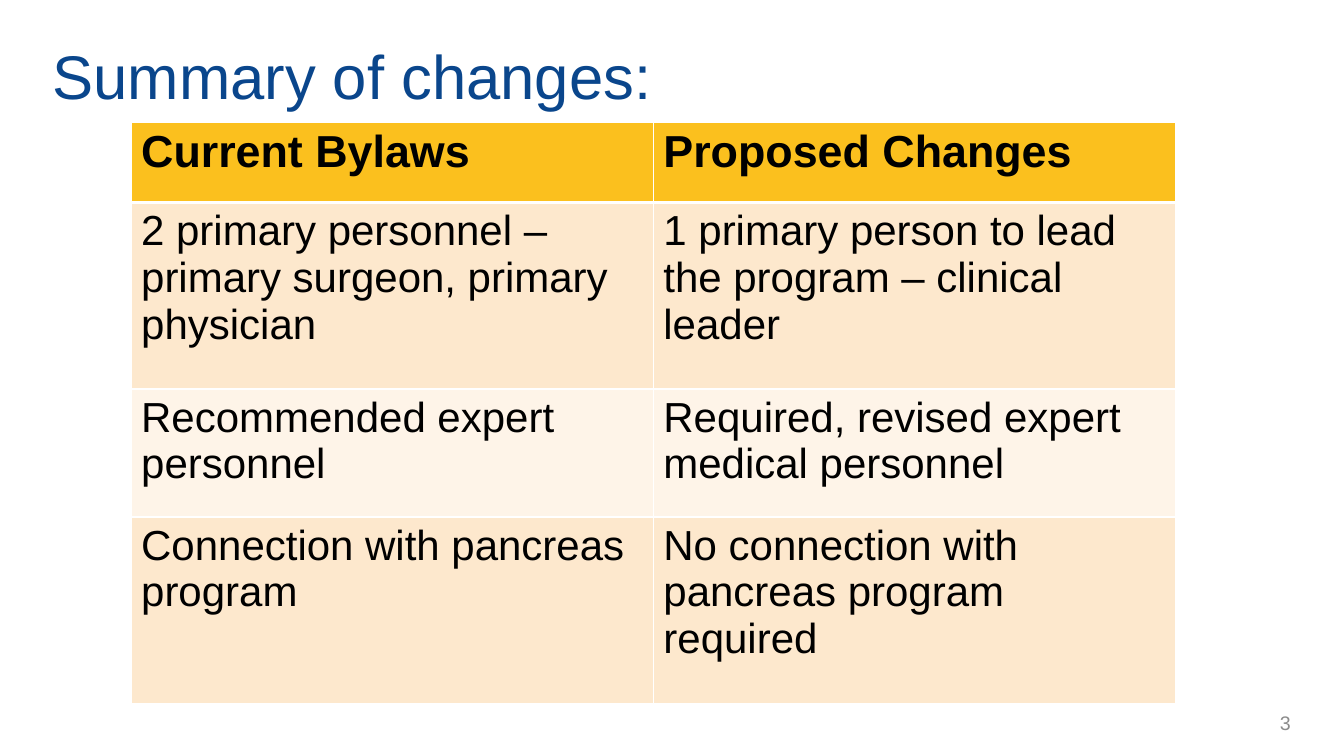
from dataclasses import dataclass

from lxml import etree
from pptx import Presentation
from pptx import util as u
from pptx.dml.color import RGBColor
from pptx.enum import text
from pptx.oxml import ns

BLUE = RGBColor(0x0A, 0x46, 0x8C)
GRAY = RGBColor(0x8C, 0x8C, 0x8C)
BLACK = RGBColor(0, 0, 0)
WHITE = RGBColor(0xFF, 0xFF, 0xFF)
GOLD = RGBColor(0xFB, 0xC0, 0x1E)
PEACH = RGBColor(0xFD, 0xE8, 0xCD)
CREAM = RGBColor(0xFE, 0xF4, 0xE8)


@dataclass(frozen=True)
class Row:
    current: str
    proposed: str
    height: float
    fill: RGBColor
    header: bool = False


ROWS = [
    Row("Current Bylaws", "Proposed Changes", 0.8, GOLD, header=True),
    Row("2 primary personnel – primary surgeon, primary physician",
        "1 primary person to lead the program – clinical leader", 1.85, PEACH),
    Row("Recommended expert personnel",
        "Required, revised expert medical personnel", 1.27, CREAM),
    Row("Connection with pancreas program",
        "No connection with pancreas program required", 1.85, PEACH),
]


def add_run(p, words: str, size: float, color: RGBColor, bold: bool = False) -> None:
    r = p.add_run()
    r.text = words
    r.font.name = "Arial"
    r.font.size = u.Pt(size)
    r.font.bold = bold
    r.font.color.rgb = color


def set_border(cell, side: str, width: float) -> None:
    tc_pr = cell._tc.get_or_add_tcPr()
    ln = etree.SubElement(tc_pr, ns.qn(f"a:ln{side}"), w=str(u.Pt(width)))
    fill = etree.SubElement(ln, ns.qn("a:solidFill"))
    etree.SubElement(fill, ns.qn("a:srgbClr"), val=str(WHITE))


def add_changes_table(s) -> None:
    height = sum(row.height for row in ROWS)
    table = s.shapes.add_table(len(ROWS), 2, u.Inches(1.3), u.Inches(1.21),
                               u.Inches(10.36), u.Inches(height)).table
    for i, row in enumerate(ROWS):
        table.rows[i].height = u.Inches(row.height)
        for j, words in enumerate((row.current, row.proposed)):
            cell = table.cell(i, j)
            for side in "LRTB":
                thick = (side == "B" and i == 0) or (side == "T" and i == 1)
                set_border(cell, side, 3 if thick else 1)
            cell.fill.solid()
            cell.fill.fore_color.rgb = row.fill
            add_run(cell.text_frame.paragraphs[0], words,
                    32 if row.header else 30, BLACK, row.header)


def add_title(s) -> None:
    sp = s.shapes.title
    sp.left, sp.top = u.Inches(0.42), u.Inches(0.28)
    sp.width, sp.height = u.Inches(12.74), u.Inches(0.93)
    tf = sp.text_frame
    tf.vertical_anchor = text.MSO_ANCHOR.MIDDLE
    p = tf.paragraphs[0]
    p.alignment = text.PP_ALIGN.LEFT
    add_run(p, "Summary of changes:", 44, BLUE)


def add_page_number(s) -> None:
    sp = s.shapes.add_textbox(u.Inches(10.64), u.Inches(6.97),
                              u.Inches(2.26), u.Inches(0.4))
    tf = sp.text_frame
    tf.word_wrap = True
    tf.vertical_anchor = text.MSO_ANCHOR.MIDDLE
    p = tf.paragraphs[0]
    p.alignment = text.PP_ALIGN.RIGHT
    add_run(p, "3", 14, GRAY)


def main() -> None:
    prs = Presentation()
    prs.slide_width, prs.slide_height = u.Inches(13.33), u.Inches(7.5)
    s = prs.slides.add_slide(prs.slide_layouts[5])
    add_title(s)
    add_page_number(s)
    add_changes_table(s)
    prs.save("out.pptx")


if __name__ == "__main__":
    main()
